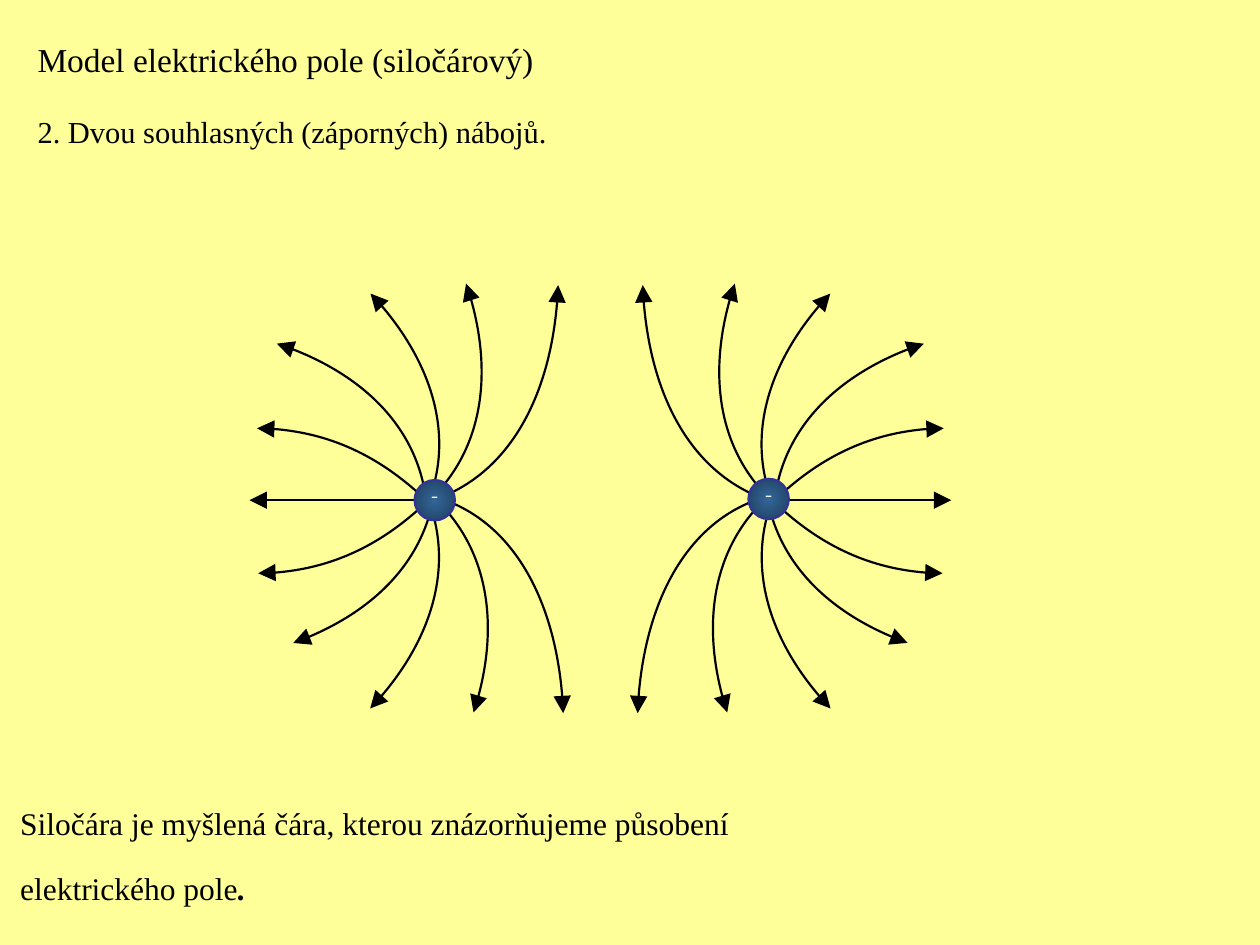
"""Field lines of two like negative charges."""
from math import cos, radians, sin
from lxml.etree import SubElement
from pptx import Presentation
from pptx.dml.color import RGBColor
from pptx.enum.shapes import MSO_CONNECTOR, MSO_SHAPE
from pptx.enum.text import MSO_ANCHOR, PP_ALIGN
from pptx.oxml.ns import qn
from pptx.util import Inches, Pt

SERIF = "Times New Roman"
TEXTS = [
    {"at": (0.2, 0.2, 7.24, 1.22), "left": 0.1, "top": 0.11, "gap": 19.2, "paragraphs": [
        [("Model elektrického pole (siločárový)", 19.1, False)],
        [("2. Dvou souhlasných (záporných) nábojů.", 17.4, False)]]},
    {"at": (0.1, 6.28, 9.82, 1.1), "left": 0.06, "top": 0.1, "gap": 15.4, "paragraphs": [
        [("Siločára je myšlená čára, kterou znázorňujeme působení", 18, False)],
        [("elektrického pole", 18, False), (".", 18, True)]]},
]
MIRROR = 9.53
AXIS = [(3.3, 3.97), (1.98, 3.97)]
FIELD_LINES = [
    ((1.68, 3.29, 1.35, 1.53), 43, [(3.37, 3.96), (2.99, 3.6), (2.51, 3.4), (2.04, 3.4)]),
    ((1.81, 3.47, 1.36, 1.91), 270, [(3.45, 3.91), (3.37, 4.43), (2.95, 4.88), (2.33, 5.1)]),
    ((1.69, 3.13, 1.35, 1.53), 317, [(3.38, 3.99), (3, 4.35), (2.52, 4.55), (2.05, 4.55)]),
    ((1.73, 2.46, 1.38, 1.91), 90, [(3.38, 3.94), (3.3, 3.4), (2.85, 2.94), (2.2, 2.73)]),
    ((2.13, 2.1, 1.39, 1.91), 119.3, [(3.4, 3.98), (3.6, 3.47), (3.42, 2.83), (2.94, 2.33)]),
    ((2.13, 3.94, 1.39, 1.91), 240.7, [(3.4, 3.96), (3.6, 4.48), (3.42, 5.12), (2.94, 5.62)]),
    ((2.6, 1.93, 1.39, 1.91), 144.9, [(3.41, 3.97), (3.82, 3.58), (3.93, 2.92), (3.7, 2.25)]),
    ((2.64, 4.09, 1.39, 1.91), 215.1, [(3.46, 3.96), (3.86, 4.34), (3.98, 4.99), (3.76, 5.65)]),
    ((3.09, 1.57, 1.43, 2.28), 167.6, [(3.51, 3.95), (4.05, 3.73), (4.4, 3.09), (4.43, 2.27)]),
    ((3.13, 4.07, 1.43, 2.28), 192.4, [(3.56, 3.98), (4.09, 4.19), (4.44, 4.84), (4.47, 5.66)]),
]
CHARGES = [(3.29, 3.81), (5.94, 3.8)]
DIAMETER = 0.32


def color(hex_string):
    return RGBColor.from_string(hex_string)


def style_line(line, hex_string):
    line.color.rgb = color(hex_string)
    line.width = Pt(1.25)


def style_run(r, size, font, hex_string):
    r.font.size, r.font.name = Pt(size), font
    r.font.color.rgb = color(hex_string)


def set_insets(tf, left, top, right, bottom):
    tf.margin_left, tf.margin_top = Inches(left), Inches(top)
    tf.margin_right, tf.margin_bottom = Inches(right), Inches(bottom)


def add_text(s, at, left, top, gap, paragraphs):
    tf = s.shapes.add_textbox(*map(Inches, at)).text_frame
    tf.word_wrap = True
    set_insets(tf, left, top, left, 0.01)
    for i, runs in enumerate(paragraphs):
        p = tf.paragraphs[0] if i == 0 else tf.add_paragraph()
        if i < len(paragraphs) - 1:
            p.space_after = Pt(gap)
        for text, size, strong in runs:
            r = p.add_run()
            r.text = text
            style_run(r, size, SERIF, "000000")
            r.font.bold = r.font.italic = strong


def add_arrowhead(line):
    style_line(line, "000000")
    SubElement(line._get_or_add_ln(), qn("a:tailEnd"), type="triangle", w="lg", len="lg")


def mirror_points(points):
    return [(MIRROR - x, y) for x, y in points]


def mirror_curve(box, angle, points):
    x, y, w, h = box
    return (MIRROR - x - w, y, w, h), 360 - angle, mirror_points(points)


def unrotate(point, center, angle):
    dx, dy = point[0] - center[0], point[1] - center[1]
    c, n = cos(radians(angle)), sin(radians(angle))
    return center[0] + dx * c + dy * n, center[1] - dx * n + dy * c


def add_axis(s, points):
    (x1, y1), (x2, y2) = points
    cn = s.shapes.add_connector(MSO_CONNECTOR.STRAIGHT, *map(Inches, (x1, y1, x2, y2)))
    add_arrowhead(cn.line)
    SubElement(cn._element.spPr, qn("a:effectLst"))


def add_curve(s, box, angle, points):
    x, y, w, h = box
    center = x + w / 2, y + h / 2
    start, *rest = [tuple(map(Inches, unrotate(p, center, angle))) for p in points]
    builder = s.shapes.build_freeform(Inches(x), Inches(y))
    builder.move_to(Inches(x + w), Inches(y + h))
    builder.move_to(*start)
    builder.add_line_segments(rest, close=False)
    sp = builder.convert_to_shape()
    corners = list(sp._element.iter(qn("a:moveTo")))[:2]
    segments = list(sp._element.iter(qn("a:lnTo")))
    outline = segments[0].getparent()
    bezier = SubElement(outline, qn("a:cubicBezTo"))
    for segment in segments:
        bezier.append(segment[0])
    for part in corners + segments:
        outline.remove(part)
    sp.rotation = angle
    sp.shadow.inherit = False
    sp.fill.background()
    add_arrowhead(sp.line)


def add_charge(s, x, y):
    sp = s.shapes.add_shape(MSO_SHAPE.OVAL, *map(Inches, (x, y, DIAMETER, DIAMETER)))
    sp.shadow.inherit = False
    sp.fill.gradient()
    for stop, position, shade in zip(sp.fill.gradient_stops, (0, 1), ("336699", "1E3D5B")):
        stop.position, stop.color.rgb = position, color(shade)
    grad = sp._element.spPr.find(qn("a:gradFill"))
    grad.remove(grad.find(qn("a:lin")))
    radial = SubElement(grad, qn("a:path"), path="circle")
    SubElement(radial, qn("a:fillToRect"), dict.fromkeys("ltrb", "50000"))
    style_line(sp.line, "333399")
    tf = sp.text_frame
    tf.text = "-"
    tf.word_wrap = False
    tf.vertical_anchor = MSO_ANCHOR.MIDDLE
    set_insets(tf, 0.1, 0.06, 0.1, 0.14)
    p = tf.paragraphs[0]
    p.alignment = PP_ALIGN.CENTER
    style_run(p.runs[0], 12, "Montserrat", "FFFFFF")


def main():
    prs = Presentation()
    prs.slide_width, prs.slide_height = Inches(10), Inches(7.5)
    s = prs.slides.add_slide(prs.slide_layouts[6])
    s.background.fill.solid()
    s.background.fill.fore_color.rgb = color("FFFF99")
    for text in TEXTS:
        add_text(s, **text)
    mirrored = [mirror_curve(*curve) for curve in FIELD_LINES]
    for axis, curves in ((AXIS, FIELD_LINES), (mirror_points(AXIS), mirrored)):
        add_axis(s, axis)
        for curve in curves:
            add_curve(s, *curve)
    for x, y in CHARGES:
        add_charge(s, x, y)
    prs.save("out.pptx")


if __name__ == "__main__":
    main()
